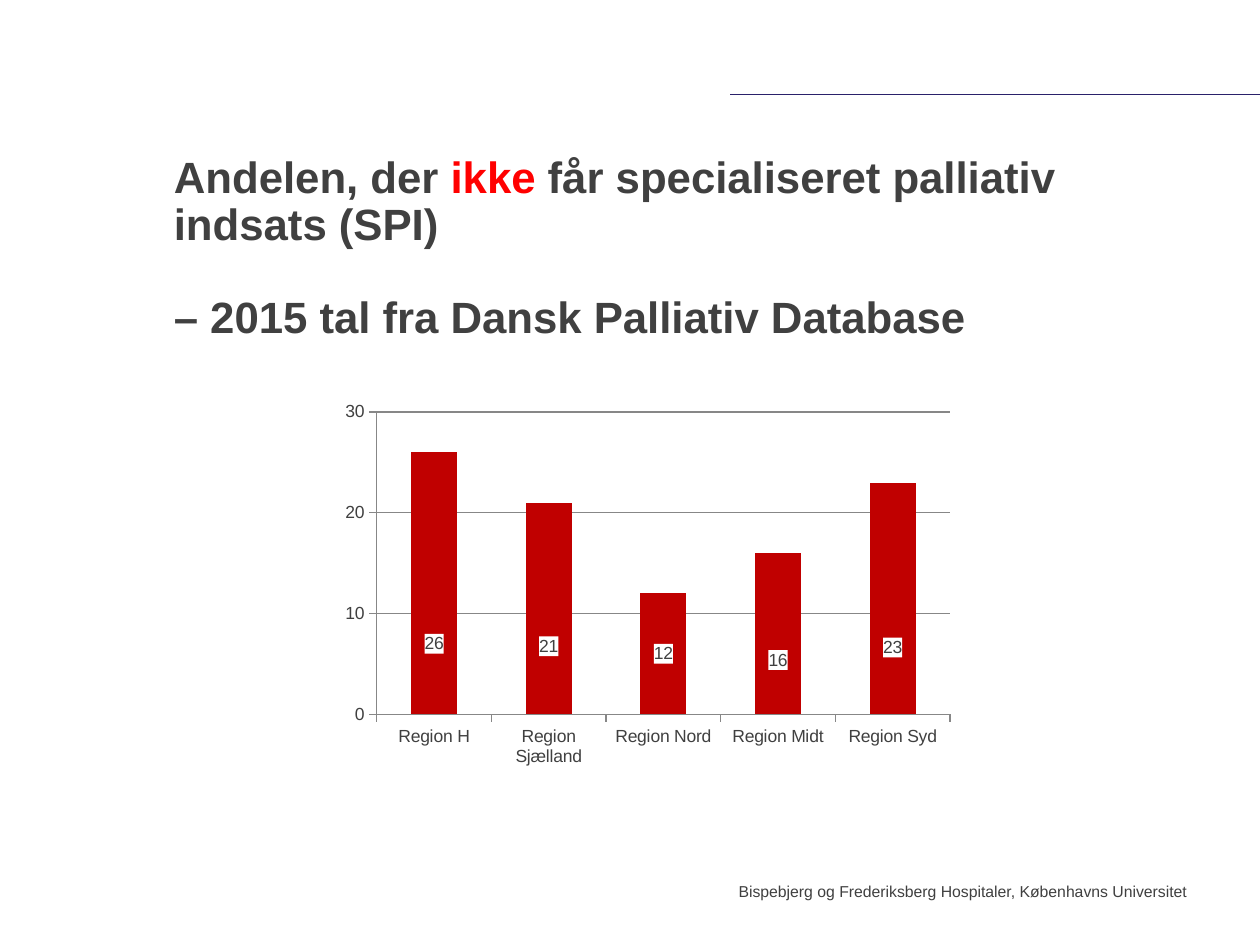
from lxml import etree
from pptx import Presentation
from pptx.chart.data import CategoryChartData
from pptx.dml.color import RGBColor
from pptx.enum.chart import XL_CHART_TYPE, XL_LABEL_POSITION, XL_TICK_MARK
from pptx.enum.text import MSO_ANCHOR, MSO_AUTO_SIZE, PP_ALIGN
from pptx.oxml import parse_xml
from pptx.oxml.ns import nsdecls, qn
from pptx.util import Inches, Pt

DARK = RGBColor(0x40, 0x40, 0x40)
RED = RGBColor(0xFF, 0x00, 0x00)
BAR = RGBColor(0xC0, 0x00, 0x00)
GREY = RGBColor(0x87, 0x87, 0x87)
NAVY = RGBColor(0x2A, 0x21, 0x6A)
WHITE_FILL = (f'<c:spPr {nsdecls("c", "a")}><a:solidFill><a:srgbClr val="FFFFFF"/>'
              '</a:solidFill><a:ln><a:noFill/></a:ln></c:spPr>')


def set_frame(frame):
    frame.word_wrap = True
    frame.auto_size = MSO_AUTO_SIZE.NONE
    frame.margin_left = frame.margin_right = 0
    frame.margin_top = frame.margin_bottom = 0


def add_run(para, text, size, color, bold=False):
    run = para.add_run()
    run.text = text
    run.font.name = "Arial"
    run.font.size = Pt(size)
    run.font.bold = bold
    run.font.color.rgb = color


prs = Presentation()
prs.slide_width, prs.slide_height = Inches(10), Inches(7.5)
slide = prs.slides.add_slide(prs.slide_layouts[5])

# Rule at the top right
rule = slide.shapes.add_connector(1, Inches(10), Inches(0.75), Inches(5.79), Inches(0.75))
rule.line.color.rgb = NAVY
rule.line.width = Pt(0.5)
etree.SubElement(rule.element.spPr, qn("a:effectLst"))

# Title
title = slide.shapes.title
title.left, title.top = Inches(1.38), Inches(1.7)
title.width, title.height = Inches(7.92), Inches(1.02)
frame = title.text_frame
set_frame(frame)
frame.vertical_anchor = MSO_ANCHOR.BOTTOM
lines = [
    [("Andelen, der ", DARK), ("ikke", RED),
     (" får specialiseret palliativ indsats (SPI)", DARK)],
    [("– 2015 tal fra Dansk Palliativ Database", DARK)],
]
for i, runs in enumerate(lines):
    para = frame.add_paragraph() if i else frame.paragraphs[0]
    para.alignment = PP_ALIGN.LEFT
    para.line_spacing = 0.9
    para.space_before = Pt(26 if i else 0)
    for text, color in runs:
        add_run(para, text, 25, color, True)

# Column chart
data = CategoryChartData()
data.categories = ["Region H", "Region Sjælland", "Region Nord", "Region Midt", "Region Syd"]
data.add_series("Series 1", [26, 21, 12, 16, 23])
chart = slide.shapes.add_chart(XL_CHART_TYPE.COLUMN_CLUSTERED, Inches(2.64), Inches(3.12),
                               Inches(5), Inches(3), data).chart
chart.has_title = chart.has_legend = False
chart.font.name = "Arial"
chart.font.size = Pt(10)
chart.font.color.rgb = DARK

# Axes and plot area
values = chart.value_axis
values.minimum_scale, values.maximum_scale, values.major_unit = 0, 30, 10
values.has_major_gridlines = True
for axis in (chart.category_axis, values):
    axis.major_tick_mark = XL_TICK_MARK.OUTSIDE
for part in (chart.category_axis, values, values.major_gridlines):
    part.format.line.color.rgb = GREY
    part.format.line.width = Pt(0.75)
area = chart.element.find(".//" + qn("c:plotArea"))
for old in area.findall(qn("c:layout")):
    area.remove(old)
area.insert(0, parse_xml(
    f'<c:layout {nsdecls("c")}><c:manualLayout><c:layoutTarget val="inner"/>'
    '<c:xMode val="edge"/><c:yMode val="edge"/><c:x val="0.07"/><c:y val="0.05"/>'
    '<c:w val="0.91"/><c:h val="0.8"/></c:manualLayout></c:layout>'))

# Bars
plot = chart.plots[0]
plot.gap_width = 150
plot.vary_by_categories = False
bars = plot.series[0]
bars.format.fill.solid()
bars.format.fill.fore_color.rgb = BAR

# White value labels, shifted down from the middle of each bar
bars.data_labels.show_value = True
for i in range(5):
    bars.points[i].data_label.position = XL_LABEL_POSITION.CENTER
group = chart.element.find(".//" + qn("c:dLbls"))
labels = group.findall(qn("c:dLbl"))
for label, shift in zip(labels, [0.16, 0.1, 0, 0.07, 0.13]):
    label.insert(1, parse_xml(
        f'<c:layout {nsdecls("c")}><c:manualLayout><c:x val="0"/>'
        f'<c:y val="{shift}"/></c:manualLayout></c:layout>'))
    label.insert(2, parse_xml(WHITE_FILL))
group.insert(len(labels), parse_xml(WHITE_FILL))

# No leader lines
for lead in group.findall(qn("c:showLeaderLines")):
    lead.set("val", "0")

# Footer
foot = slide.shapes.add_textbox(Inches(5.16), Inches(7), Inches(4.26), Inches(0.5))
set_frame(foot.text_frame)
para = foot.text_frame.paragraphs[0]
para.alignment = PP_ALIGN.RIGHT
add_run(para, "Bispebjerg og Frederiksberg Hospitaler, Københavns Universitet", 9, DARK)

prs.save("out.pptx")
